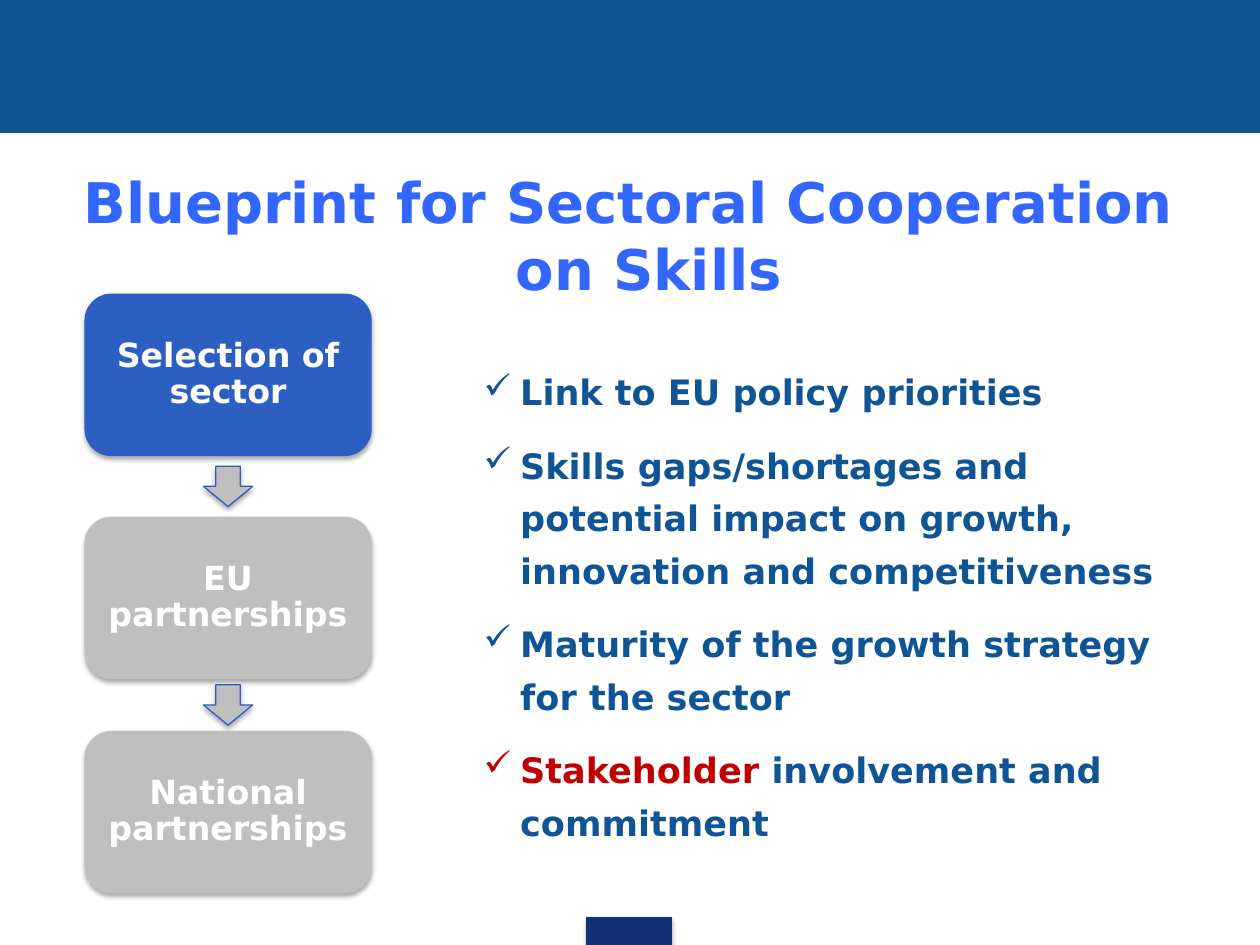
"""Build the slide on the Blueprint for Sectoral Cooperation on Skills."""
from lxml import etree
from pptx import Presentation
from pptx.dml.color import RGBColor
from pptx.enum import shapes, text
from pptx.oxml import ns
from pptx.util import Inches, Pt

FONT = "DejaVu Sans"
COLORS = {"header": "0F5494", "footer": "133176", "active": "2D5EC1", "idle": "BFBFBF",
          "title": "3366FF", "body": "0F5494", "accent": "C00000", "white": "FFFFFF"}
TITLE = "Blueprint for Sectoral Cooperation on Skills"
STEPS = [("Selection of sector", "active", 2.33),
         ("EU partnerships", "idle", 4.1),
         ("National partnerships", "idle", 5.8)]
CRITERIA = [
    [("Link to EU policy priorities", "body")],
    [("Skills gaps/shortages and potential impact on growth, innovation and competitiveness", "body")],
    [("Maturity of the growth strategy for the sector", "body")],
    [("Stakeholder", "accent"), (" involvement and commitment", "body")],
]
STEP_LEFT, STEP_WIDTH, STEP_HEIGHT = 0.67, 2.28, 1.29
ARROW_WIDTH, ARROW_HEIGHT = 0.39, 0.32


def color(name):
    return RGBColor.from_string(COLORS[name])


def style(font, size, name):
    font.name, font.size, font.bold = FONT, Pt(size), True
    font.color.rgb = color(name)


def indent(para, size):
    properties = para._p.get_or_add_pPr()
    properties.set("marL", str(Inches(size)))
    properties.set("indent", str(-Inches(size)))
    return properties


def add_shape(page, kind, place, fill, line=None, shadow=True):
    shape = page.shapes.add_shape(kind, *map(Inches, place))
    shape.fill.solid()
    shape.fill.fore_color.rgb = color(fill)
    if line:
        shape.line.color.rgb = color(line)
        shape.line.width = Pt(0.75)
    else:
        shape.line.fill.background()
    shape.shadow.inherit = False
    if shadow:
        effects = shape._element.spPr.find(ns.qn("a:effectLst"))
        outer = etree.SubElement(effects, ns.qn("a:outerShdw"), blurRad=str(Pt(3.1)),
                                 dist=str(Pt(1.8)), dir="5400000", rotWithShape="0")
        tone = etree.SubElement(outer, ns.qn("a:srgbClr"), val="000000")
        etree.SubElement(tone, ns.qn("a:alpha"), val="35000")
    return shape


def add_title(page):
    title = page.shapes.title
    title.left, title.top, title.width, title.height = map(Inches, (0.49, 1.39, 9, 0.94))
    frame = title.text_frame
    frame.text = TITLE
    frame.auto_size = text.MSO_AUTO_SIZE.NONE
    frame.vertical_anchor = text.MSO_ANCHOR.MIDDLE
    para = frame.paragraphs[0]
    indent(para, 0.32)
    para.alignment = text.PP_ALIGN.CENTER
    style(para.runs[0].font, 32, "title")


def add_steps(page):
    arrow_left = STEP_LEFT + (STEP_WIDTH - ARROW_WIDTH) / 2
    for index, (label, fill, top) in enumerate(STEPS):
        box = add_shape(page, shapes.MSO_SHAPE.ROUNDED_RECTANGLE,
                        (STEP_LEFT, top, STEP_WIDTH, STEP_HEIGHT), fill)
        frame = box.text_frame
        frame.text = label
        frame.margin_left = frame.margin_right = Inches(0.08)
        frame.margin_top = frame.margin_bottom = Inches(0.08)
        frame.vertical_anchor = text.MSO_ANCHOR.MIDDLE
        para = frame.paragraphs[0]
        para.alignment, para.line_spacing = text.PP_ALIGN.CENTER, 0.9
        style(para.runs[0].font, 19, "white")
        if index:
            gap_middle = (STEPS[index - 1][2] + STEP_HEIGHT + top) / 2
            add_shape(page, shapes.MSO_SHAPE.DOWN_ARROW,
                      (arrow_left, gap_middle - ARROW_HEIGHT / 2, ARROW_WIDTH, ARROW_HEIGHT),
                      "idle", "active")


def add_criteria(page):
    frame = page.shapes.add_textbox(*map(Inches, (3.74, 2.81, 5.91, 3.97))).text_frame
    frame.word_wrap = True
    frame.auto_size = text.MSO_AUTO_SIZE.SHAPE_TO_FIT_TEXT
    for index, parts in enumerate(CRITERIA):
        para = frame.add_paragraph() if index else frame.paragraphs[0]
        para.line_spacing, para.space_after = 1.25, Pt(12)
        etree.SubElement(indent(para, 0.29), ns.qn("a:buChar"), char="✓")
        for words, tone in parts:
            span = para.add_run()
            span.text = words
            style(span.font, 20, tone)


def main():
    deck = Presentation()
    deck.slide_width, deck.slide_height = Inches(10), Inches(7.5)
    page = deck.slides.add_slide(deck.slide_layouts[5])
    rectangle = shapes.MSO_SHAPE.RECTANGLE
    add_shape(page, rectangle, (0, 0, 10, 1.05), "header", "header", shadow=False)
    add_shape(page, rectangle, (4.66, 7.28, 0.67, 0.22), "footer", "footer")
    add_title(page)
    add_steps(page)
    add_criteria(page)
    deck.save("out.pptx")


if __name__ == "__main__":
    main()
